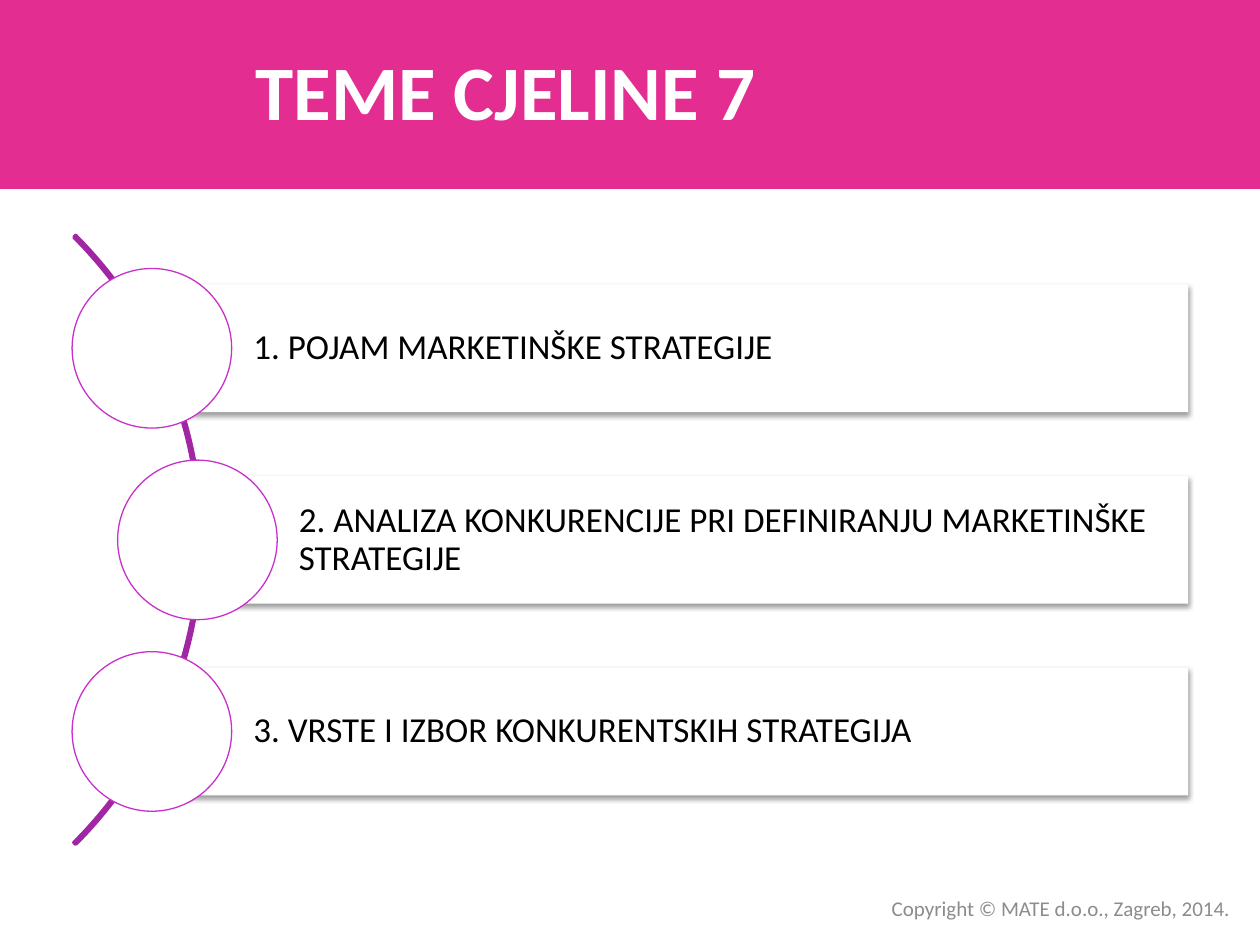
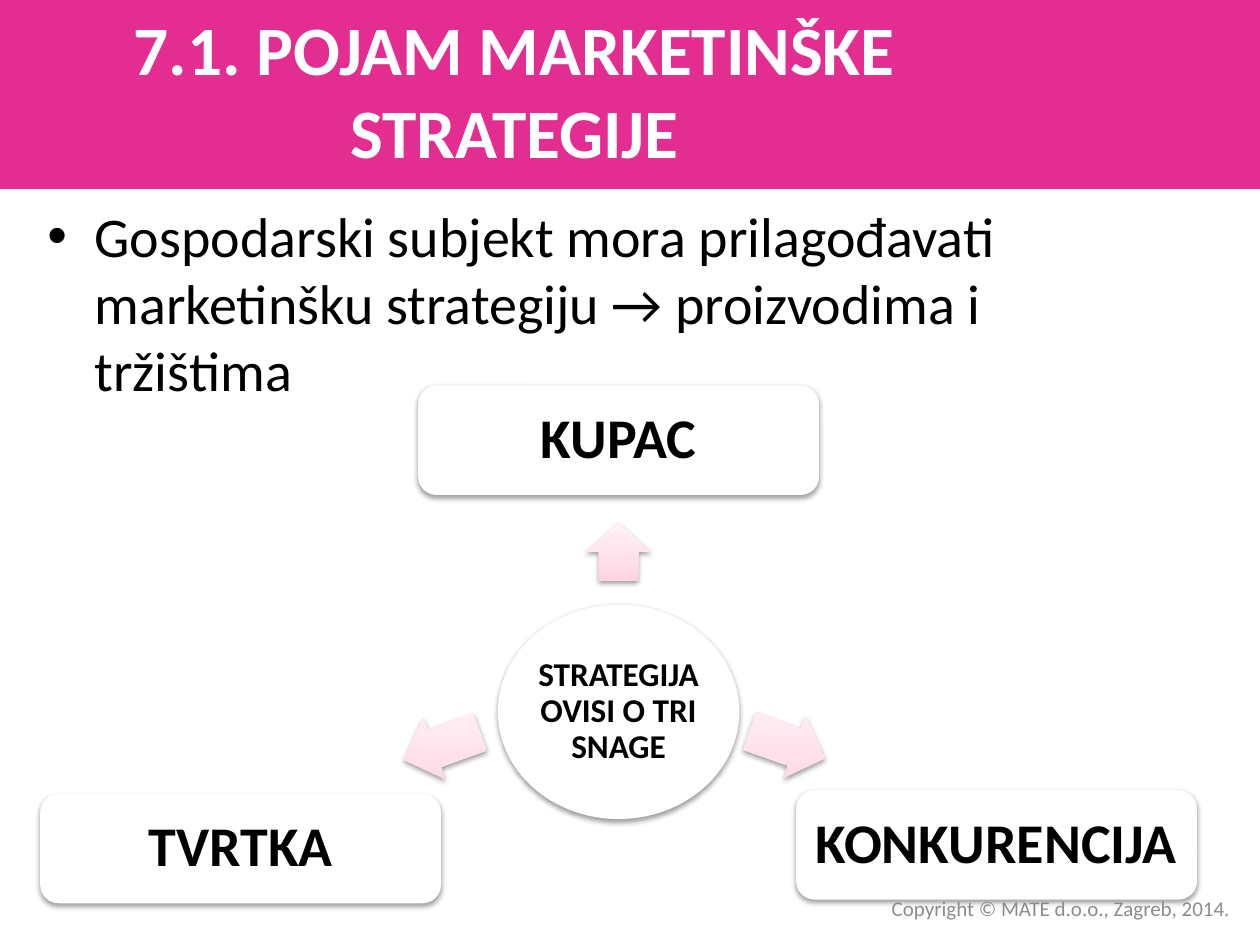
import copy
import math

from lxml import etree
from pptx import Presentation
from pptx.dml.color import RGBColor
from pptx.enum import shapes, text
from pptx.oxml import ns
from pptx.util import Pt

# Content
TOPICS = [
    "1. POJAM MARKETINŠKE STRATEGIJE",
    "2. ANALIZA KONKURENCIJE PRI DEFINIRANJU MARKETINŠKE STRATEGIJE",
    "3. VRSTE I IZBOR KONKURENTSKIH STRATEGIJA",
]
STATEMENT = ("Gospodarski subjekt mora prilagođavati marketinšku strategiju "
             "→ proizvodima i tržištima")
HUB = "STRATEGIJA OVISI O TRI SNAGE"
# Each force: label, box centre, arrow centre, arrow length, arrow angle
FORCES = [
    ("KUPAC", (353.5, 251.6), (353.5, 315.4), 33, 270),
    ("KONKURENCIJA", (569.5, 482.8), (450, 425.5), 46, 19.5),
    ("TVRTKA", (137.5, 484.9), (252.4, 426.2), 46.5, 160.1),
]
FOOTER = "Copyright © MATE d.o.o., Zagreb, 2014."

# Shared style
FONT = "Calibri"
COLOURS = {
    "band": "E32D91", "white": "FFFFFF", "black": "000000", "footer": "8C8C8C",
    "arc": "A026A3", "ring": "C830CC",
}
ARROW_STOPS = [(0, "FFD3E3"), (0.35, "FFDFEA"), (1, "FFF3F7")]
SHAPE = shapes.MSO_SHAPE
ALIGN = text.PP_ALIGN


def colour(name):
    return RGBColor.from_string(COLOURS[name])


def centred(x, y, width, height):
    return x - width / 2, y - height / 2, width, height


def add_shadow(shape):
    effects = shape._element.spPr.find(ns.qn("a:effectLst"))
    shadow = etree.SubElement(effects, ns.qn("a:outerShdw"), blurRad=str(Pt(3.1)),
                              dist=str(Pt(1.6)), dir="5400000", rotWithShape="0")
    black = etree.SubElement(shadow, ns.qn("a:srgbClr"), val=COLOURS["black"])
    etree.SubElement(black, ns.qn("a:alpha"), val="38000")


def draw(page, kind, area, fill=None, line=None, weight=0.75, shadow=False):
    shape = page.shapes.add_shape(kind, *map(Pt, area))
    shape.shadow.inherit = False
    if fill:
        shape.fill.solid()
        shape.fill.fore_color.rgb = colour(fill)
    else:
        shape.fill.background()
    if line:
        shape.line.color.rgb = colour(line)
        shape.line.width = Pt(weight)
    else:
        shape.line.fill.background()
    if shadow:
        add_shadow(shape)
    return shape


def write(box, words, size, ink="black", bold=False, align=ALIGN.LEFT,
          insets=(7.2, 3.6, 7.2, 3.6), spacing=None, anchor=text.MSO_ANCHOR.MIDDLE):
    frame = box.text_frame
    frame.word_wrap = True
    frame.vertical_anchor = anchor
    (frame.margin_left, frame.margin_top,
     frame.margin_right, frame.margin_bottom) = map(Pt, insets)
    para = frame.paragraphs[0]
    para.alignment = align
    if spacing:
        para.line_spacing = spacing
    span = para.add_run()
    span.text = words
    span.font.name = FONT
    span.font.size = Pt(size)
    span.font.bold = bold
    span.font.color.rgb = colour(ink)
    return para


def add_text(page, area, words, size, **style):
    return write(page.shapes.add_textbox(*map(Pt, area)), words, size, **style)


def add_title(page, words, size):
    add_text(page, (0, 6, 588, 90), words, size, ink="white", bold=True,
             align=ALIGN.CENTER)


def add_footer(page):
    add_text(page, (337.5, 508, 372.5, 22), FOOTER, 12, ink="footer", align=ALIGN.RIGHT)


def add_page(deck):
    page = deck.slides.add_slide(deck.slide_layouts[6])
    draw(page, SHAPE.RECTANGLE, (0, 0, 720, 108), "band")
    return page


def add_bullet(para):
    props = para._p.get_or_add_pPr()
    props.set("marL", str(Pt(27)))
    props.set("indent", str(Pt(-27)))
    etree.SubElement(props, ns.qn("a:buFont"), typeface="Arial")
    etree.SubElement(props, ns.qn("a:buChar"), char="•")


def add_arrow(page, centre, length, angle):
    arrow = draw(page, SHAPE.RIGHT_ARROW, centred(*centre, length, 37.5), shadow=True)
    arrow.rotation = angle
    arrow.adjustments[0] = 0.6
    arrow.fill.gradient()
    arrow.fill.gradient_angle = 90
    gradient = arrow._element.spPr.find(ns.qn("a:gradFill"))
    gradient.set("rotWithShape", "0")
    stops = gradient.find(ns.qn("a:gsLst"))
    stops.append(copy.deepcopy(stops[-1]))
    for stop, (position, shade) in zip(arrow.fill.gradient_stops, ARROW_STOPS):
        stop.position = position
        stop.color.rgb = RGBColor.from_string(shade)


def topics_page(deck):
    page = add_page(deck)
    add_title(page, "TEME CJELINE 7 ", 44)

    # Arc whose centre lies left of the page
    arc_x, arc_y, radius = -130.7, 308.5, 243.5
    arc = draw(page, SHAPE.BLOCK_ARC, centred(arc_x, arc_y, 492, 492),
               line="arc", weight=2)
    for index, value in enumerate((189, 27, 0.003)):
        arc.adjustments[index] = value

    # Bars start at the centres of circles that sit on the arc
    right, step = 679, 109.5
    for index, topic in enumerate(TOPICS):
        offset = (index - 1) * step
        x = arc_x + math.sqrt(radius ** 2 - offset ** 2)
        y = arc_y + offset
        bar = draw(page, SHAPE.RECTANGLE, (x, y - 36.5, right - x, 73),
                   "white", shadow=True)
        write(bar, topic, 20, insets=(58, 4, 4, 4), spacing=0.9)
        draw(page, SHAPE.OVAL, centred(x, y, 91.2, 91.2), "white", "ring")
    add_footer(page)


def forces_page(deck):
    page = add_page(deck)
    para = add_text(page, (20, 111.5, 648, 356.5), STATEMENT, 32,
                    anchor=text.MSO_ANCHOR.TOP)
    add_bullet(para)

    # Hub, then an arrow and a box for each force
    hub = draw(page, SHAPE.OVAL, centred(353.5, 406.8, 138, 122.5), "white", shadow=True)
    write(hub, HUB, 19, bold=True, align=ALIGN.CENTER, insets=(2, 2, 2, 2), spacing=0.9)
    for label, box_centre, arrow_centre, length, angle in FORCES:
        add_arrow(page, arrow_centre, length, angle)
        box = draw(page, SHAPE.ROUNDED_RECTANGLE, centred(*box_centre, 229, 62.5),
                   "white", shadow=True)
        write(box, label, 32, bold=True, align=ALIGN.CENTER,
              insets=(3, 3, 3, 3), spacing=0.9)
    add_title(page, "7.1. POJAM MARKETINŠKE STRATEGIJE", 39.6)
    add_footer(page)


def main():
    deck = Presentation()
    deck.slide_width, deck.slide_height = Pt(720), Pt(540)
    topics_page(deck)
    forces_page(deck)
    deck.save("out.pptx")


if __name__ == "__main__":
    main()
